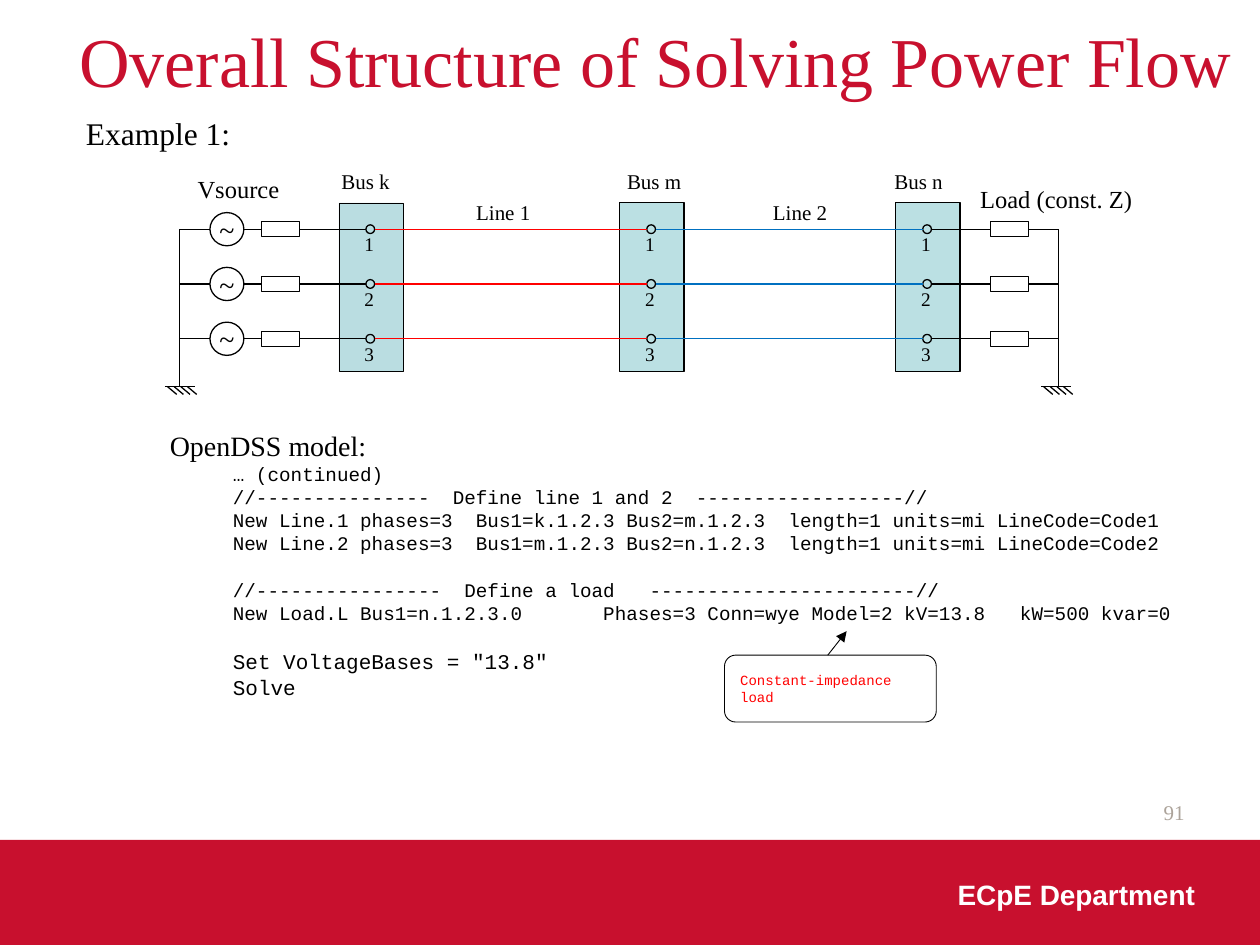
from lxml import etree
from pptx import Presentation
from pptx import util as u
from pptx.dml.color import RGBColor
from pptx.enum import shapes, text
from pptx.oxml.ns import qn

COLORS = {"red": "C8102E", "grey": "ACA39A", "black": "000000", "white": "FFFFFF",
          "bus": "BBE0E3", "bus_k": "BADDE1", "line1": "FF0000", "line2": "0070C0"}
SERIF, SANS, MONO = "Times New Roman", "Arial", "Courier New"
LEFT, CENTER, RIGHT = text.PP_ALIGN.LEFT, text.PP_ALIGN.CENTER, text.PP_ALIGN.RIGHT
SHAPE = shapes.MSO_SHAPE


def rgb(name):
    return RGBColor.from_string(COLORS[name])


class Builder:
    def __init__(self, prs):
        self.slide = prs.slides.add_slide(prs.slide_layouts[5])

    def run(self, p, words, size, color="black", font=SERIF, bold=False):
        r = p.add_run()
        r.text = words
        r.font.size, r.font.name, r.font.bold = u.Pt(size), font, bold
        r.font.color.rgb = rgb(color)

    def title(self, words, x, y, w, h):
        sp = self.slide.shapes.title
        sp.left, sp.top, sp.width, sp.height = map(u.Pt, (x, y, w, h))
        tf = sp.text_frame
        tf.vertical_anchor = text.MSO_ANCHOR.MIDDLE
        tf.auto_size = text.MSO_AUTO_SIZE.NONE
        tf.paragraphs[0].alignment = LEFT
        self.run(tf.paragraphs[0], words, 40, "red")

    def box(self, x, y, w, h, wrap=True):
        sp = self.slide.shapes.add_textbox(*map(u.Pt, (x, y, w, h)))
        sp.text_frame.word_wrap = wrap
        return sp.text_frame

    def label(self, words, x, y, w, h, size, wrap=False, align=LEFT, middle=False, **style):
        tf = self.box(x, y, w, h, wrap)
        if middle:
            tf.vertical_anchor = text.MSO_ANCHOR.MIDDLE
        tf.paragraphs[0].alignment = align
        self.run(tf.paragraphs[0], words, size, **style)

    def shape(self, kind, x, y, w, h, fill=None, width=0.75):
        sp = self.slide.shapes.add_shape(kind, *map(u.Pt, (x, y, w, h)))
        sp.shadow.inherit = False
        if fill:
            sp.fill.solid()
            sp.fill.fore_color.rgb = rgb(fill)
        else:
            sp.fill.background()
        if width:
            sp.line.color.rgb = rgb("black")
            sp.line.width = u.Pt(width)
        else:
            sp.line.fill.background()
        return sp

    def line(self, x1, y1, x2, y2, color="black", width=0.75, arrow=False):
        ln = self.slide.shapes.add_connector(
            shapes.MSO_CONNECTOR.STRAIGHT, *map(u.Pt, (x1, y1, x2, y2)))
        ln.line.color.rgb = rgb(color)
        ln.line.width = u.Pt(width)
        sp_pr = ln._element.spPr
        if arrow:
            etree.SubElement(sp_pr.find(qn("a:ln")), qn("a:tailEnd"), type="triangle")
        etree.SubElement(sp_pr, qn("a:effectLst"))

    def source(self, x, y):
        sp = self.shape(SHAPE.OVAL, x, y - 9.5, 19.4, 19)
        tf = sp.text_frame
        tf.margin_left = tf.margin_right = tf.margin_top = tf.margin_bottom = 0
        tf.word_wrap = False
        tf.vertical_anchor = text.MSO_ANCHOR.MIDDLE
        tf.paragraphs[0].alignment = CENTER
        self.run(tf.paragraphs[0], "~", 16)

    def impedance(self, x, y):
        self.shape(SHAPE.RECTANGLE, x, y - 4.3, 21.6, 8.6)

    def ground(self, rail, bar, top):
        self.line(rail, top, rail, 221)
        self.line(bar, 221, bar + 17.3, 221)
        for i in range(4):
            x = bar + 1.5 + 3.8 * i
            self.line(x, 221, x + 5.2, 225.4)

    def code(self, tf, lines):
        for words, size, gap in lines:
            p = tf.add_paragraph()
            p._p.get_or_add_pPr().set("marL", str(u.Pt(36)))
            p.alignment = text.PP_ALIGN.JUSTIFY
            p.space_before = u.Pt(gap)
            self.run(p, words, size, font=MONO)


def main():
    prs = Presentation()
    prs.slide_width, prs.slide_height = u.Pt(720), u.Pt(540)
    b = Builder(prs)

    # Footer, page number and headings
    b.shape(SHAPE.RECTANGLE, 0, 480, 720, 60, "red", width=0)
    b.label("91", 516, 449.6, 168, 29, 12, True, RIGHT, middle=True, color="grey")
    b.label("ECpE Department", 498, 498, 192, 30, 16, True, RIGHT,
            color="white", font=SANS, bold=True)
    b.title("Overall Structure of Solving Power Flow", 38.2, 6.5, 675.4, 55.2)
    b.label("Example 1:", 42, 61.6, 589, 29, 18, True)

    # Buses with their three terminals
    rows = [131 + 31.3 * i for i in range(3)]
    buses = [("Bus k", 193.7, "bus_k", 0.25, 188), ("Bus m", 354.2, "bus", 0.75, 351.2),
             ("Bus n", 511.9, "bus", 0.75, 504)]
    for name, x, fill, width, label_x in buses:
        b.shape(SHAPE.RECTANGLE, x, 115.9, 36.7, 96.5, fill, width)
        b.label(name, label_x, 93, 48, 21.8, 12)
        for i, y in enumerate(rows, 1):
            b.shape(SHAPE.OVAL, x + 15.4, y - 2.5, 5, 5)
            b.label(str(i), x + 7.4, y - 1.6, 20, 20.6, 11)

    # Sources, lines and loads, phase by phase
    k, m, n = (bus[1] + 15.4 for bus in buses)
    for y in rows:
        b.source(120, y)
        b.impedance(149.6, y)
        b.impedance(566, y)
        for x1, x2, color in [(102.6, 120, "black"), (139.6, 149.6, "black"),
                              (171.2, k, "black"), (k + 5, m, "line1"),
                              (m + 5, n, "line2"), (n + 5, 566, "black"),
                              (587.6, 604.8, "black")]:
            b.line(x1, y, x2, y, color)
    b.ground(102.6, 94.3, rows[0])
    b.ground(604.8, 594.9, rows[0])

    # Diagram labels
    b.label("Vsource", 105.8, 96, 62, 24.2, 14)
    b.label("Line 1", 265, 110.4, 46, 21.8, 12)
    b.label("Line 2", 434.6, 110.2, 46, 21.8, 12)
    b.label("Load (const. Z)", 553, 101.6, 103.7, 24.2, 14, True)

    # Model listing
    tf = b.box(90, 237.6, 604, 167.8)
    tf.paragraphs[0].line_spacing = 1.2
    b.run(tf.paragraphs[0], "OpenDSS model:", 16)
    b.code(tf, [
        ("… (continued)", 11, 0),
        ("//---------------  Define line 1 and 2  ------------------//", 11, 0),
        ("New Line.1 phases=3  Bus1=k.1.2.3 Bus2=m.1.2.3  length=1 units=mi LineCode=Code1", 11, 0),
        ("New Line.2 phases=3  Bus1=m.1.2.3 Bus2=n.1.2.3  length=1 units=mi LineCode=Code2", 11, 0),
        ("//----------------  Define a load   -----------------------//", 11, 13.2),
        ("New Load.L Bus1=n.1.2.3.0       Phases=3 Conn=wye Model=2 kV=13.8   kW=500 kvar=0", 11, 0),
        ('Set VoltageBases = "13.8"', 12, 14.2),
        ("Solve", 12, 0)])

    # Callout on the load model
    b.line(473, 374.4, 483.8, 360.7, width=0.5, arrow=True)
    sp = b.shape(SHAPE.ROUNDED_RECTANGLE, 414, 374.4, 121, 38.2, width=0.5)
    sp.text_frame.word_wrap = True
    sp.text_frame.vertical_anchor = text.MSO_ANCHOR.MIDDLE
    sp.text_frame.paragraphs[0].alignment = LEFT
    b.run(sp.text_frame.paragraphs[0], "Constant-impedance load", 8, "line1", MONO)

    prs.save("out.pptx")


if __name__ == "__main__":
    main()
